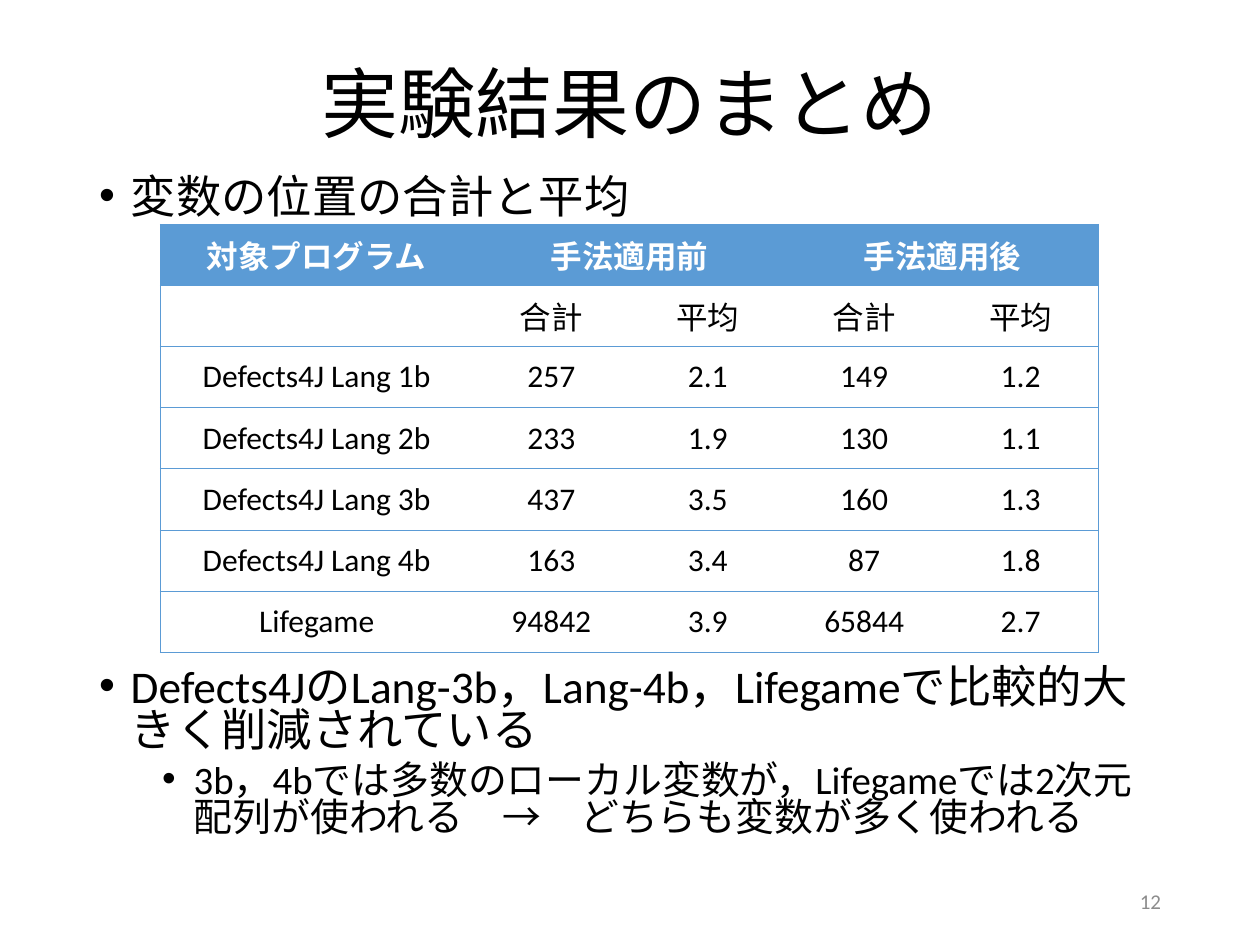
from lxml import etree
from pptx import Presentation
from pptx.dml.color import RGBColor
from pptx.enum.text import MSO_ANCHOR, MSO_AUTO_SIZE, PP_ALIGN
from pptx.oxml.ns import qn
from pptx.util import Pt

CENTER, LEFT, RIGHT = PP_ALIGN.CENTER, PP_ALIGN.LEFT, PP_ALIGN.RIGHT
MIDDLE, TOP = MSO_ANCHOR.MIDDLE, MSO_ANCHOR.TOP
NO_FIT = MSO_AUTO_SIZE.NONE

BLACK = RGBColor(0x00, 0x00, 0x00)
WHITE = RGBColor(0xFF, 0xFF, 0xFF)
BLUE = RGBColor(0x5B, 0x9B, 0xD5)
GRAY = RGBColor(0x8C, 0x8C, 0x8C)
FONT = "Calibri"

TITLE = "実験結果のまとめ"
PAGE_NUMBER = "12"
# (text, level, size, space before)
BULLETS = [
    ("変数の位置の合計と平均", 0, 25.9, 10),
    ("Defects4JのLang-3b，Lang-4b，Lifegameで比較的大きく削減されている", 0, 25.9, 255),
    ("3b，4bでは多数のローカル変数が，Lifegameでは2次元配列が使われる　→　どちらも変数が多く使われる", 1, 22.2, 5),
]
ROWS = [
    ("対象プログラム", "手法適用前", "", "手法適用後", ""),
    ("", "合計", "平均", "合計", "平均"),
    ("Defects4J Lang 1b", "257", "2.1", "149", "1.2"),
    ("Defects4J Lang 2b", "233", "1.9", "130", "1.1"),
    ("Defects4J Lang 3b", "437", "3.5", "160", "1.3"),
    ("Defects4J Lang 4b", "163", "3.4", "87", "1.8"),
    ("Lifegame", "94842", "3.9", "65844", "2.7"),
]
COLUMN_WIDTHS = [178.8, 89.4, 89.4, 89.4, 89.4]
ROW_HEIGHT = 34.95
MERGED_HEADERS = [(1, 2), (3, 4)]


def place(shape, left, top, width, height):
    shape.left, shape.top = Pt(left), Pt(top)
    shape.width, shape.height = Pt(width), Pt(height)


def style(para, size, color, align, bold=False):
    para.alignment = align
    para.font.name = FONT
    para.font.size = Pt(size)
    para.font.bold = bold
    para.font.color.rgb = color


def add_bullet(para, level):
    properties = para._p.get_or_add_pPr()
    properties.set("marL", str(Pt(18 + 36 * level)))
    properties.set("indent", str(Pt(-18)))
    etree.SubElement(properties, qn("a:buFont"), typeface="Arial")
    etree.SubElement(properties, qn("a:buChar"), char="•")


def add_borders(cell, visible_sides):
    properties = cell._tc.get_or_add_tcPr()
    for side in "LRTB":
        line = etree.SubElement(properties, qn(f"a:ln{side}"), w=str(Pt(0.5)))
        if side in visible_sides:
            fill = etree.SubElement(line, qn("a:solidFill"))
            etree.SubElement(fill, qn("a:srgbClr"), val=str(BLUE))
        else:
            etree.SubElement(line, qn("a:noFill"))


def add_title(page):
    title = page.shapes.title
    place(title, 49.5, 9.5, 621, 104.4)
    title.text_frame.text = TITLE
    title.text_frame.auto_size = NO_FIT
    title.text_frame.vertical_anchor = MIDDLE
    para = title.text_frame.paragraphs[0]
    para.line_spacing = 0.9
    style(para, 44, BLACK, CENTER)


def add_body(page):
    body = page.placeholders[1]
    place(body, 49.5, 98.5, 621, 387.4)
    frame = body.text_frame
    frame.text = "\n".join(bullet[0] for bullet in BULLETS)
    frame.auto_size = NO_FIT
    frame.vertical_anchor = TOP
    for para, (_, level, size, gap) in zip(frame.paragraphs, BULLETS):
        para.level = level
        para.line_spacing = 0.8
        para.space_before = Pt(gap)
        add_bullet(para, level)
        style(para, size, BLACK, LEFT)


def add_results(page):
    frame = page.shapes.add_table(
        len(ROWS), len(COLUMN_WIDTHS), Pt(91.6), Pt(128.2),
        Pt(sum(COLUMN_WIDTHS)), Pt(ROW_HEIGHT * len(ROWS)))
    table = frame.table
    table.horz_banding = False
    for column, width in zip(table.columns, COLUMN_WIDTHS):
        column.width = Pt(width)
    for row in table.rows:
        row.height = Pt(ROW_HEIGHT)
    for first, last in MERGED_HEADERS:
        table.cell(0, first).merge(table.cell(0, last))

    last_column = len(COLUMN_WIDTHS) - 1
    for r, values in enumerate(ROWS):
        header = r == 0
        for c, value in enumerate(values):
            cell = table.cell(r, c)
            edge = {0: "L", last_column: "R"}.get(c, "")
            if cell.is_merge_origin and c + cell.span_width > last_column:
                edge = "R"
            add_borders(cell, "TB" + edge)
            if header:
                cell.fill.solid()
                cell.fill.fore_color.rgb = BLUE
            else:
                cell.fill.background()
            cell.vertical_anchor = MIDDLE
            cell.text = value
            style(cell.text_frame.paragraphs[0], 18,
                  WHITE if header else BLACK, CENTER, bold=header)


def add_page_number(page):
    box = page.shapes.add_textbox(Pt(508.5), Pt(500.5), Pt(162), Pt(28.75))
    frame = box.text_frame
    frame.word_wrap = True
    frame.vertical_anchor = MIDDLE
    frame.text = PAGE_NUMBER
    style(frame.paragraphs[0], 12, GRAY, RIGHT)


def main():
    deck = Presentation()
    deck.slide_width, deck.slide_height = Pt(720), Pt(540)
    page = deck.slides.add_slide(deck.slide_layouts[1])
    add_title(page)
    add_body(page)
    add_page_number(page)
    add_results(page)
    deck.save("out.pptx")


if __name__ == "__main__":
    main()
